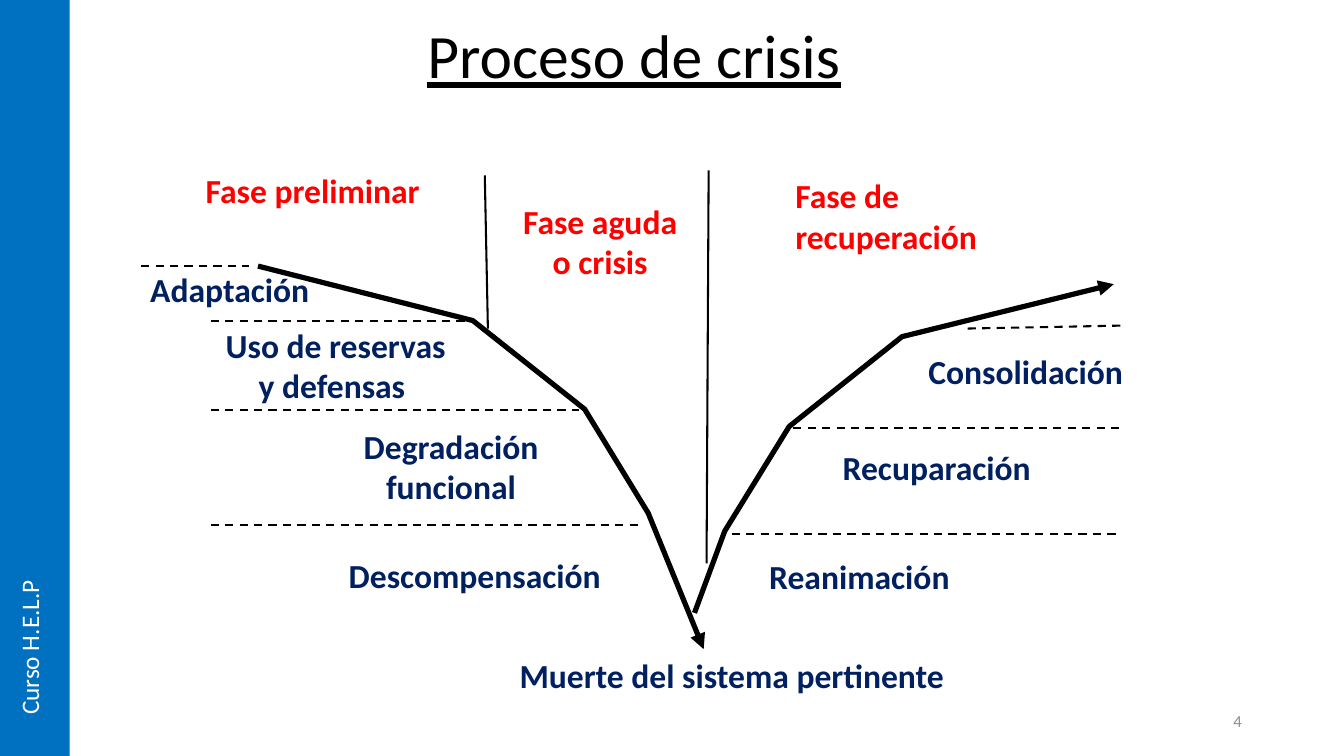
"""Build the crisis process slide: two phase curves, level lines and labels."""
from dataclasses import dataclass

import pptx
import pptx.dml.color
import pptx.enum.dml
import pptx.enum.text
import pptx.oxml.ns
import pptx.oxml.xmlchemy
import pptx.util
from lxml import etree

Pt = pptx.util.Pt
Align = pptx.enum.text.PP_ALIGN
Anchor = pptx.enum.text.MSO_ANCHOR
qn = pptx.oxml.ns.qn


@dataclass
class Theme:
    """Hold the colours, type sizes and line weights."""
    font: str = "Calibri"
    black: str = "000000"
    white: str = "FFFFFF"
    navy: str = "002060"
    red: str = "FF0000"
    blue: str = "0070C0"
    gray: str = "8C8C8C"
    title: float = 44
    label: float = 24
    side: float = 18
    small: float = 12
    thin: float = 1.48
    thick: float = 3.71


theme = Theme()


def color(code):
    """Turn a hex code into a colour."""
    return pptx.dml.color.RGBColor.from_string(code)


def write(text, place, size, ink, align=Align.LEFT, anchor=Anchor.TOP):
    """Add a text box and return it."""
    box = slide.shapes.add_textbox(*map(Pt, place))
    frame = box.text_frame
    frame.word_wrap = True
    frame.vertical_anchor = anchor
    frame.text = text
    para = frame.paragraphs[0]
    para.alignment = align
    font = para.runs[0].font
    font.name = theme.font
    font.size = Pt(size)
    font.color.rgb = color(ink)
    return box


deck = pptx.Presentation()
deck.slide_width, deck.slide_height = Pt(960), Pt(540)
slide = deck.slides.add_slide(deck.slide_layouts[6])

head = write("Proceso de crisis", (146.9, -20.9, 612, 90), theme.title,
             theme.black, Align.CENTER, Anchor.BOTTOM)
para = head.text_frame.paragraphs[0]
para.line_spacing = 0.9
para.runs[0].font.underline = True

levels = [
    (100.8, 190.1, 177.8, 190.1),
    (150.5, 229, 333.4, 229),
    (150.5, 293, 413.3, 293),
    (150.5, 375.1, 456.5, 375.1),
    (691.2, 234.7, 800.6, 232.6),
    (522.7, 381.6, 800.6, 381.6),
    (566.6, 306, 800.6, 306),
]
walls = [(348.5, 234.7, 346.3, 125.3), (504.7, 402.5, 506.2, 121.7)]
for ends in levels + walls:
    rule = slide.shapes.add_connector(
        pptx.enum.shapes.MSO_CONNECTOR.STRAIGHT, *map(Pt, ends))
    rule.line.color.rgb = color(theme.black)
    rule.line.width = Pt(theme.thin)
    if ends in levels:
        rule.line.dash_style = pptx.enum.dml.MSO_LINE.DASH
    etree.SubElement(rule.element.spPr, qn("a:effectLst"))

mid, left = Align.CENTER, Align.LEFT
top, center = Anchor.TOP, Anchor.MIDDLE
labels = [
    ("Fase preliminar", (146.9, 121.7, 190, 31.7), theme.red, left, top),
    ("Fase aguda o crisis", (365, 136.1, 127.4, 72), theme.red, mid, center),
    ("Fase de recuperación", (568.1, 125.3, 187.2, 31.7), theme.red, left, top),
    ("Adaptación", (107.3, 192.2, 141.8, 13.7), theme.navy, left, top),
    ("Uso de reservas y defensas ", (154.1, 235.4, 171.4, 50.4), theme.navy, mid, center),
    ("Degradación funcional", (245.5, 316.1, 153.4, 33.8), theme.navy, mid, center),
    ("Descompensación", (249.1, 396, 192.2, 20.9), theme.navy, left, top),
    ("Reanimación", (549.4, 396.7, 184.3, 36.7), theme.navy, left, top),
    ("Recuparación", (601.9, 319, 157, 10.8), theme.navy, left, top),
    ("Consolidación", (663.1, 250.6, 165.6, 39.6), theme.navy, left, top),
    ("Muerte del sistema pertinente", (367.9, 468, 309.6, 31.7), theme.navy, mid, top),
]
for text, place, ink, align, anchor in labels:
    box = write(text, place, theme.label, ink, align, anchor)
    frame = box.text_frame
    frame.margin_left = frame.margin_right = 0
    frame.margin_top = frame.margin_bottom = 0
    frame.paragraphs[0].runs[0].font.bold = True

rise = [(496.1, 437.8), (517.7, 379.4), (563.8, 304.6), (644.4, 240.5), (795.6, 203)]
fall = [(184.3, 190.1), (337.7, 229), (417.6, 292.3), (463, 366.5), (502.6, 463.7)]
for curve in (rise, fall):
    first, *rest = [(Pt(x), Pt(y)) for x, y in curve]
    pen = slide.shapes.build_freeform(*first)
    pen.add_line_segments(rest, close=False)
    shape = pen.convert_to_shape()
    shape.shadow.inherit = False
    shape.fill.background()
    shape.line.color.rgb = color(theme.black)
    shape.line.width = Pt(theme.thick)
    stroke = shape.element.spPr.find(qn("a:ln"))
    etree.SubElement(stroke, qn("a:tailEnd"), type="triangle")

band = slide.shapes.add_shape(
    pptx.enum.shapes.MSO_SHAPE.RECTANGLE, 0, 0, Pt(49.7), Pt(540))
band.shadow.inherit = False
band.fill.solid()
band.fill.fore_color.rgb = color(theme.blue)
band.line.fill.background()

side = write("Curso H.E.L.P", (6.5, 403.9, 36, 113.8), theme.side, theme.white)
side.text_frame.word_wrap = False
side.text_frame.auto_size = pptx.enum.text.MSO_AUTO_SIZE.SHAPE_TO_FIT_TEXT
side.element.txBody.find(qn("a:bodyPr")).set("vert", "vert270")

write("4", (678.2, 500.4, 216, 28.8), theme.small, theme.gray, Align.RIGHT, center)

deck.save("out.pptx")
